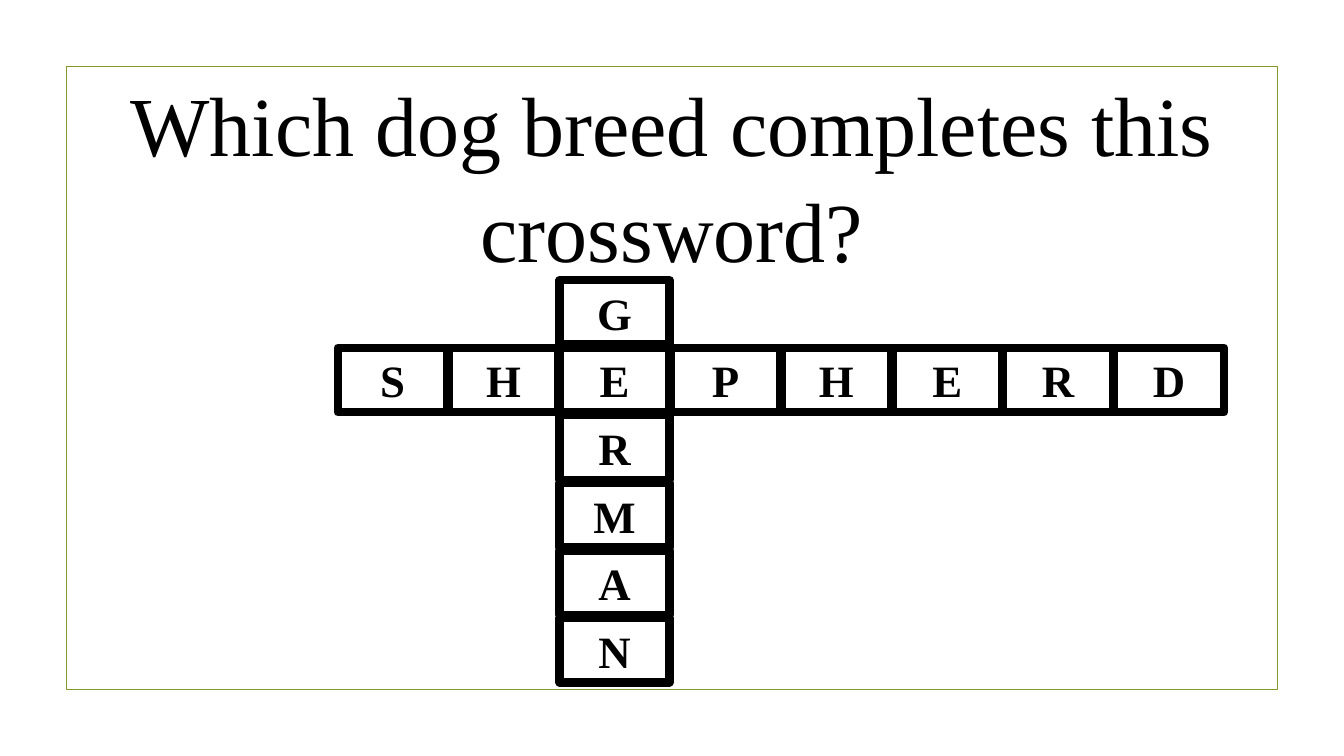
from lxml import etree
from pptx import Presentation, util as u
from pptx.dml.color import RGBColor
from pptx.enum import shapes, text
from pptx.oxml.ns import qn

WIDTH, HEIGHT = 13.33, 7.5
MARGIN = 0.66
GRID_LEFT, GRID_TOP = 3.35, 2.78
COLUMN, ROW = 1.1, 0.67
CELL_WIDTH, CELL_HEIGHT = 1.09, 0.64

ACROSS, ACROSS_ROW = "SHEPHERD", 1
DOWN, DOWN_COLUMN = "GERMAN", 2


def color(hex_code):
    return RGBColor.from_string(hex_code)


def write(shape, wording, size, bold=False, spacing=1.0, font="Times New Roman",
          ink="000000"):
    frame = shape.text_frame
    frame.word_wrap = True
    frame.auto_size = text.MSO_AUTO_SIZE.NONE
    frame.vertical_anchor = text.MSO_ANCHOR.MIDDLE
    frame.text = wording
    paragraph = frame.paragraphs[0]
    paragraph.alignment = text.PP_ALIGN.CENTER
    paragraph.line_spacing = spacing
    style = paragraph.runs[0].font
    style.name, style.size, style.bold = font, u.Pt(size), bold
    style.color.rgb = color(ink)


def outline(slide, left, top, width, height, ink, weight):
    """Add an unfilled rectangle."""
    box = slide.shapes.add_shape(shapes.MSO_SHAPE.RECTANGLE,
                                 *map(u.Inches, (left, top, width, height)))
    box.shadow.inherit = False
    box.fill.background()
    box.line.color.rgb = color(ink)
    box.line.width = u.Pt(weight)
    return box


def letter_cell(slide, letter, column, row):
    cell = outline(slide, GRID_LEFT + column * COLUMN, GRID_TOP + row * ROW,
                   CELL_WIDTH, CELL_HEIGHT, "000000", 6)
    etree.SubElement(cell.line._get_or_add_ln(), qn("a:round"))
    write(cell, letter, 32, bold=True)


def question(slide, wording):
    title = slide.shapes.title
    title.left = title.top = u.Inches(MARGIN)
    title.width, title.height = u.Inches(WIDTH - 2 * MARGIN), u.Inches(2.12)
    write(title, wording, 60, spacing=1.05)


def crossword(slide):
    letters = {(DOWN_COLUMN, row): letter for row, letter in enumerate(DOWN)}
    letters.update({(column, ACROSS_ROW): letter
                    for column, letter in enumerate(ACROSS)})
    for (column, row), letter in letters.items():
        letter_cell(slide, letter, column, row)


def main():
    deck = Presentation()
    deck.slide_width, deck.slide_height = u.Inches(WIDTH), u.Inches(HEIGHT)
    slide = deck.slides.add_slide(deck.slide_layouts.get_by_name("Title Only"))
    outline(slide, MARGIN, MARGIN, WIDTH - 2 * MARGIN, HEIGHT - 2 * MARGIN,
            "83992A", 1.25)
    question(slide, "Which dog breed completes this crossword?")
    crossword(slide)
    deck.save("out.pptx")


if __name__ == "__main__":
    main()
